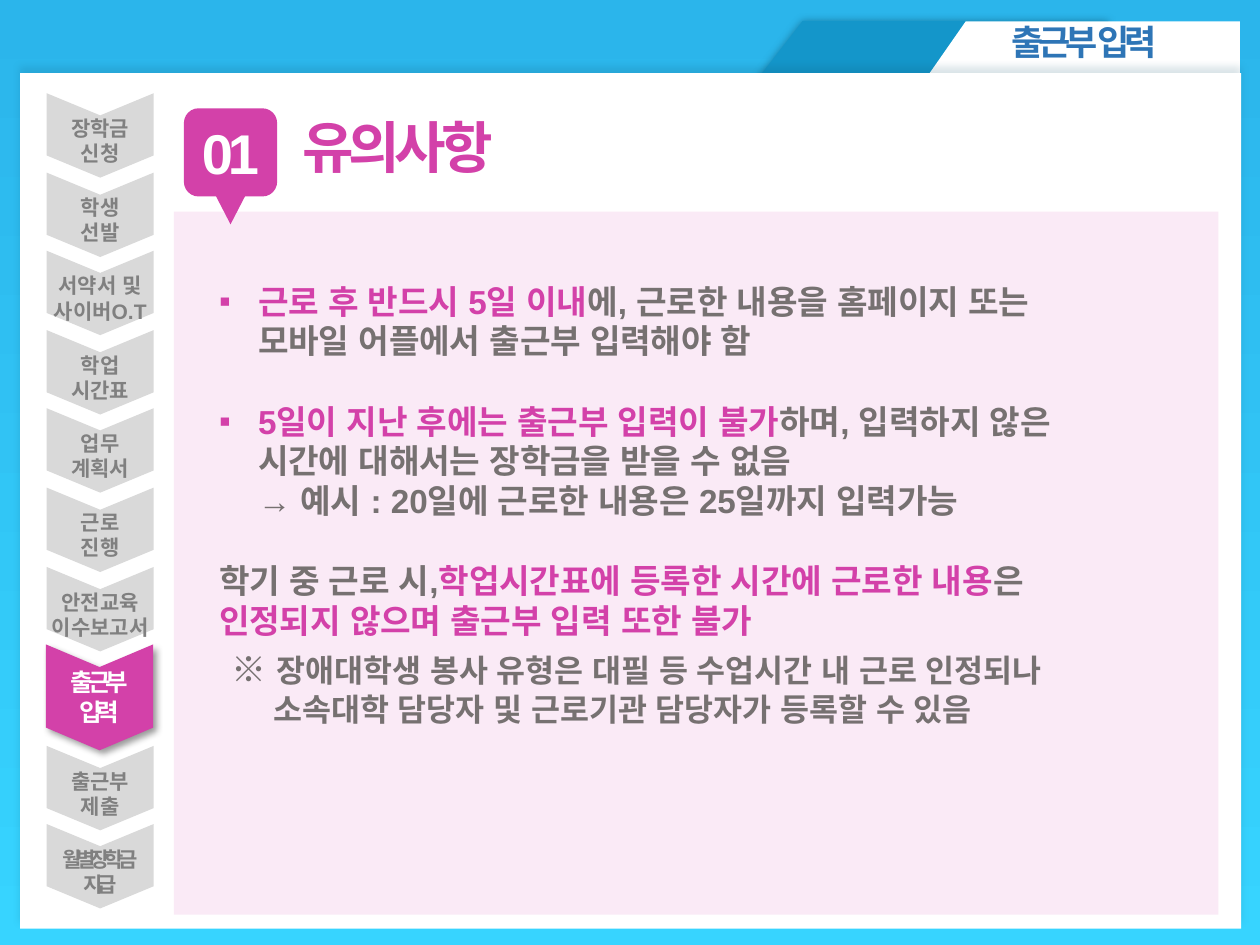
from lxml.etree import SubElement
from pptx import Presentation
from pptx.dml.color import RGBColor
from pptx.enum.shapes import MSO_SHAPE
from pptx.enum.text import MSO_ANCHOR, PP_ALIGN
from pptx.oxml.ns import qn
from pptx.util import Emu, Pt

PX = 9144  # 100 px to the inch
COLORS = {
    "sky_top": "2BB5EB", "sky_bottom": "37D4FF",
    "tab": "1496CA", "tab_shadow": "0A4C66", "blue": "2E75B6",
    "pink": "D341A9", "pale_pink": "FAEAF6", "gray": "767171",
    "step": "D9D9D9", "step_text": "808080", "white": "FFFFFF", "black": "000000",
}


def rgb(name):
    return RGBColor.from_string(COLORS[name])


def add_span(para, text, size=19, color="gray", spacing=None):
    """Append formatted text, turning each newline into a line break."""
    for index, line in enumerate(text.split("\n")):
        if index:
            para.add_line_break()
        if not line:
            continue
        span = para.add_run()
        span.text = line
        span.font.name = "Arial"
        span.font.size = Pt(size)
        span.font.bold = True
        span.font.color.rgb = rgb(color)
        SubElement(span.font._element, qn("a:ea"), typeface="Arial")
        if spacing is not None:
            span.font._element.set("spc", str(spacing * 100))


class SlideBuilder:
    def __init__(self, deck):
        self.page = deck.slides.add_slide(deck.slide_layouts[6])

    def background(self, top, bottom):
        fill = self.page.background.fill
        fill.gradient()
        fill.gradient_angle = 270
        for stop, color in zip(fill.gradient_stops, (top, bottom)):
            stop.color.rgb = rgb(color)

    def shape(self, kind, frame, color, rotation=0, flip=False, shadow=None):
        """shadow is (color, opacity percent, blur pt, distance pt, degrees)."""
        shape = self.page.shapes.add_shape(kind, *(Emu(n * PX) for n in frame))
        shape.fill.solid()
        shape.fill.fore_color.rgb = rgb(color)
        shape.line.fill.background()
        shape.rotation = rotation
        shape.shadow.inherit = False
        properties = shape.element.spPr
        if flip:
            properties.xfrm.set("flipV", "1")
        if shadow:
            tint, opacity, blur, distance, angle = shadow
            outer = SubElement(
                properties.find(qn("a:effectLst")), qn("a:outerShdw"),
                blurRad=str(Pt(blur)), dist=str(Pt(distance)),
                dir=str(angle * 60000), algn="ctr", rotWithShape="0")
            value = SubElement(outer, qn("a:srgbClr"), val=COLORS[tint])
            SubElement(value, qn("a:alpha"), val=str(opacity * 1000))
        return shape

    def label(self, shape, lines, anchor, insets=(0, 0), **style):
        """Write centred lines inside a shape."""
        frame = shape.text_frame
        frame.word_wrap = True
        frame.vertical_anchor = anchor
        frame.margin_left = frame.margin_right = Emu(insets[0] * PX)
        frame.margin_top = frame.margin_bottom = Emu(insets[1] * PX)
        for index, line in enumerate(lines):
            para = frame.add_paragraph() if index else frame.paragraphs[0]
            para.alignment = PP_ALIGN.CENTER
            add_span(para, line, **style)

    def step(self, top, lines, active=False, spacing=None):
        """Draw a down-pointing chevron with upright text."""
        length = 84 if active else 67
        chevron = self.shape(
            MSO_SHAPE.CHEVRON, (37 if active else 46, top, length, 85),
            "pink" if active else "step", rotation=90,
            shadow=("black", 40, 4, 3, 45) if active else None)
        chevron.adjustments[0] = 0.214 if active else 0.263
        self.label(chevron, lines, MSO_ANCHOR.TOP, size=14 if active else 12,
                   color="white" if active else "step_text", spacing=spacing)
        chevron.text_frame._txBody.bodyPr.set("vert", "vert270")

    def text_box(self, frame, wrap=True):
        box = self.page.shapes.add_textbox(*(Emu(n * PX) for n in frame))
        box.text_frame.word_wrap = wrap
        return box.text_frame

    def heading(self, frame, text, **style):
        add_span(self.text_box(frame, wrap=False).paragraphs[0], text, **style)

    def body(self, frame, paragraphs):
        """Each paragraph is (spans, margin, indent, bullet, before, after)."""
        text_frame = self.text_box(frame)
        for index, (spans, margin, indent, bullet, before, after) in enumerate(paragraphs):
            para = text_frame.add_paragraph() if index else text_frame.paragraphs[0]
            para.space_before, para.space_after = Pt(before), Pt(after)
            properties = para._p.get_or_add_pPr()
            properties.set("marL", str(margin * PX))
            properties.set("indent", str(indent * PX))
            if bullet:
                color = SubElement(properties, qn("a:buClr"))
                SubElement(color, qn("a:srgbClr"), val=COLORS["pink"])
                SubElement(properties, qn("a:buFont"), typeface="Arial")
                SubElement(properties, qn("a:buChar"), char=bullet)
            for text, style in spans:
                add_span(para, text, **style)


STEPS = [
    ("장학금", "신청"), ("학생", "선발"), ("서약서 및", "사이버O.T"),
    ("학업", "시간표"), ("업무", "계획서"), ("근로", "진행"),
    ("안전교육", "이수보고서"), ("출근부", "입력"), ("출근부", "제출"),
    ("월별 장학금", "지급"),
]
ACTIVE_STEP = 7
TIGHT_STEPS = (7, 9)
PINK = {"color": "pink"}
GRAY = {"color": "gray"}
NOTES = [
    ([("근로 후 반드시 5일 이내", PINK),
      ("에, 근로한 내용을 홈페이지 또는\n모바일 어플에서 출근부 입력해야 함", GRAY)],
     31, -31, "▪", 0, 23),
    ([("5일이 지난 후에는 출근부 입력이 불가", PINK),
      ("하며, 입력하지 않은\n시간에 대해서는 장학금을 받을 수 없음\n"
       "→ 예시 : 20일에 근로한 내용은 25일까지 입력가능", GRAY)],
     31, -31, "▪", 0, 23),
    ([("학기 중 근로 시,", GRAY), ("학업시간표에 등록한 시간에 근로한 내용", PINK),
      ("은\n", GRAY), ("인정되지 않으며 출근부 입력 또한 불가", PINK)],
     0, 0, None, 0, 0),
    ([("※ ", {"size": 20}),
      ("장애대학생 봉사 유형은 대필 등 수업시간 내 근로 인정되나\n"
       "소속대학 담당자 및 근로기관 담당자가 등록할 수 있음", {"size": 18})],
     43, -33, None, 4, 0),
]


def main():
    deck = Presentation()
    deck.slide_width, deck.slide_height = Emu(1000 * PX), Emu(750 * PX)
    slide = SlideBuilder(deck)
    slide.background("sky_top", "sky_bottom")

    slide.shape(MSO_SHAPE.FLOWCHART_MANUAL_INPUT, (689, -96, 78, 303), "tab",
                rotation=90, flip=True, shadow=("tab_shadow", 52, 5, 0, 0))
    slide.shape(MSO_SHAPE.FLOWCHART_MANUAL_INPUT, (809, -80, 78, 272), "white",
                rotation=90, flip=True)
    slide.shape(MSO_SHAPE.RECTANGLE, (16, 58, 969, 679), "white",
                shadow=("tab_shadow", 14, 4, 3, 270))
    slide.heading((793, 11, 148, 44), "출근부 입력", size=20, color="blue", spacing=-3)

    slide.shape(MSO_SHAPE.RECTANGLE, (138, 168, 829, 558), "pale_pink")
    slide.body((164, 218, 785, 369), NOTES)

    for index, lines in enumerate(STEPS):
        extra = 8 if index == ACTIVE_STEP else 17 if index > ACTIVE_STEP else 0
        slide.step(65 + round(62.6 * index) + extra, lines, index == ACTIVE_STEP,
                   -3 if index in TIGHT_STEPS else None)

    badge = slide.shape(MSO_SHAPE.FLOWCHART_ALTERNATE_PROCESS, (146, 86, 74, 70), "pink")
    slide.label(badge, ["01"], MSO_ANCHOR.MIDDLE, insets=(4, 5),
                size=32, color="white", spacing=-3)
    slide.shape(MSO_SHAPE.FLOWCHART_MERGE, (168, 149, 30, 29), "pink")
    slide.heading((230, 84, 317, 64), "유의사항", size=32, color="pink", spacing=-3)
    deck.save("out.pptx")


if __name__ == "__main__":
    main()
